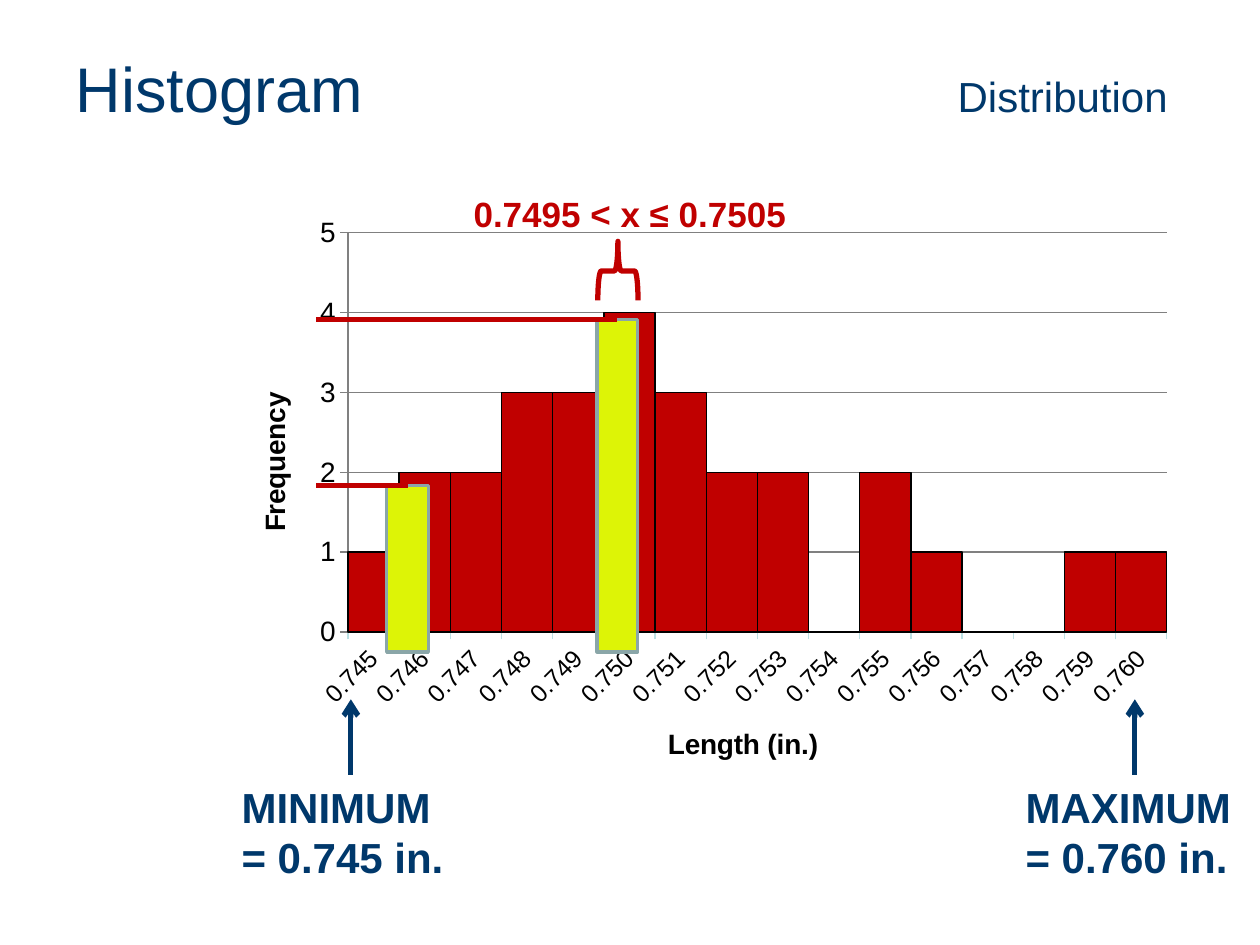
from lxml import etree
from pptx import Presentation
from pptx.chart.data import CategoryChartData
from pptx.dml.color import RGBColor
from pptx.enum.chart import XL_CHART_TYPE, XL_TICK_MARK
from pptx.enum.shapes import MSO_CONNECTOR, MSO_SHAPE
from pptx.enum.text import MSO_ANCHOR, PP_ALIGN
from pptx.oxml import parse_xml
from pptx.oxml.ns import nsdecls, qn
from pptx.util import Pt

COLUMN_CLUSTERED = XL_CHART_TYPE.COLUMN_CLUSTERED
TICK_OUTSIDE = XL_TICK_MARK.OUTSIDE
STRAIGHT = MSO_CONNECTOR.STRAIGHT
RECTANGLE = MSO_SHAPE.RECTANGLE
RIGHT_BRACE = MSO_SHAPE.RIGHT_BRACE
MIDDLE = MSO_ANCHOR.MIDDLE
LEFT = PP_ALIGN.LEFT
TOP_SITE = 0

NAVY = RGBColor(0x00, 0x38, 0x6B)
RED = RGBColor(0xC0, 0x00, 0x00)
YELLOW = RGBColor(0xDD, 0xF4, 0x06)
GREY_BLUE = RGBColor(0x8A, 0xA6, 0xA8)
PALE_BLUE = RGBColor(0xBB, 0xE0, 0xE3)
GREY = RGBColor(0x80, 0x80, 0x80)
BLACK = RGBColor(0x00, 0x00, 0x00)

FONT = "Arial"
LENGTH_FORMAT = "0.000"
FREQUENCIES = (1, 2, 2, 3, 3, 4, 3, 2, 2, 0, 2, 1, 0, 0, 1, 1)
LENGTHS = [(745 + step) / 1000 for step in range(len(FREQUENCIES))]


def format_font(font, size, color=BLACK, bold=False):
    font.name = FONT
    font.size = Pt(size)
    font.bold = bold
    font.color.rgb = color


def write(paragraph, text, **text_format):
    run = paragraph.add_run()
    run.text = text
    format_font(run.font, **text_format)


def format_line(line, color, width):
    line.color.rgb = color
    line.width = Pt(width)


def place(shape, box):
    shape.left, shape.top, shape.width, shape.height = (Pt(length) for length in box)


def add_text(slide, box, text, **text_format):
    text_box = slide.shapes.add_textbox(*(Pt(length) for length in box))
    text_box.text_frame.word_wrap = True
    write(text_box.text_frame.paragraphs[0], text, **text_format)
    return text_box


def add_line(slide, start, end, color):
    points = [Pt(length) for length in (*start, *end)]
    connector = slide.shapes.add_connector(STRAIGHT, *points)
    format_line(connector.line, color, 3)
    etree.SubElement(connector._element.spPr, qn("a:effectLst"))
    return connector


def add_title(slide, box):
    title = slide.shapes.title
    place(title, box)
    title.text_frame.vertical_anchor = MIDDLE
    paragraph = title.text_frame.paragraphs[0]
    paragraph.alignment = LEFT
    tab_list = etree.SubElement(paragraph._p.get_or_add_pPr(), qn("a:tabLst"))
    etree.SubElement(tab_list, qn("a:tab"), pos=str(Pt(504)), algn="l")
    write(paragraph, "Histogram\t", size=36, color=NAVY)
    write(paragraph, "Distribution", size=24, color=NAVY)


def chart_layout(box, x, y, **size):
    """Return a manual layout for a part at x, y points from the chart's corner."""
    _, _, width, height = box
    modes = "".join(f'<c:{axis}Mode val="edge"/>' for axis in "xy")
    target = '<c:layoutTarget val="inner"/>' if size else ""
    whole = {"x": width, "y": height, "w": width, "h": height}
    lengths = {"x": x, "y": y, **size}
    values = "".join(
        f'<c:{key} val="{length / whole[key]}"/>' for key, length in lengths.items()
    )
    return parse_xml(
        f'<c:layout {nsdecls("c")}><c:manualLayout>{target}{modes}{values}'
        "</c:manualLayout></c:layout>"
    )


def format_axis(axis, title, label_size, line_color, layout):
    axis.major_tick_mark = TICK_OUTSIDE
    format_font(axis.tick_labels.font, label_size)
    format_line(axis.format.line, line_color, 0.75)
    write(axis.axis_title.text_frame.paragraphs[0], title, size=16, bold=True)
    title_element = axis.axis_title._element
    for old_layout in title_element.findall(qn("c:layout")):
        title_element.remove(old_layout)
    title_element.find(qn("c:tx")).addnext(layout)


def add_histogram(slide, box):
    data = CategoryChartData()
    data.categories = LENGTHS
    data.categories.number_format = LENGTH_FORMAT
    data.add_series("Series 1", FREQUENCIES)
    frame = slide.shapes.add_chart(
        COLUMN_CLUSTERED, *(Pt(length) for length in box), data
    )
    chart = frame.chart
    chart.has_legend = False
    chart.has_title = False
    format_font(chart.font, 10)

    plot = chart.plots[0]
    plot.gap_width = 0
    plot.vary_by_categories = False
    series = plot.series[0]
    series.format.fill.solid()
    series.format.fill.fore_color.rgb = RED
    format_line(series.format.line, BLACK, 0.75)

    length_axis = chart.category_axis
    length_title = chart_layout(box, x=247, y=294.5)
    format_axis(length_axis, "Length (in.)", 14, PALE_BLUE, length_title)
    length_axis.tick_labels.number_format = LENGTH_FORMAT
    length_axis.tick_labels.number_format_is_linked = False
    length_axis._element.txPr.bodyPr.set("rot", "-2700000")

    frequency_axis = chart.value_axis
    frequency_title = chart_layout(box, x=12, y=104)
    format_axis(frequency_axis, "Frequency", 16, GREY, frequency_title)
    frequency_axis.axis_title.text_frame._txBody.bodyPr.set("rot", "-5400000")
    frequency_axis.minimum_scale, frequency_axis.maximum_scale = 0, 5
    frequency_axis.major_unit = 1
    format_line(frequency_axis.major_gridlines.format.line, GREY, 0.75)

    plot_area = chart._chartSpace.chart.plotArea
    for old_layout in plot_area.findall(qn("c:layout")):
        plot_area.remove(old_layout)
    plot_area.insert(0, chart_layout(box, x=67, y=15.5, w=468, h=228.3))


def add_highlighted_bar(slide, box, line_left):
    """Add a bar with a line from the frequency axis to its top."""
    left, top, width, _ = box
    bar = slide.shapes.add_shape(RECTANGLE, *(Pt(length) for length in box))
    bar.shadow.inherit = False
    bar.fill.solid()
    bar.fill.fore_color.rgb = YELLOW
    format_line(bar.line, GREY_BLUE, 2)
    line = add_line(slide, (line_left, top), (left + width / 2, top), RED)
    line.end_connect(bar, TOP_SITE)


def add_limit(slide, box, text, arrow_length):
    """Add a label with an arrow up to the length axis."""
    left, top, width, _ = box
    label = add_text(slide, box, text, size=24, color=NAVY, bold=True)
    middle = left + width / 2
    arrow = add_line(slide, (middle, top), (middle, top - arrow_length), NAVY)
    arrow.begin_connect(label, TOP_SITE)
    etree.SubElement(arrow.line._get_or_add_ln(), qn("a:tailEnd"), type="arrow")


def add_interval(slide, label_box, brace_box):
    brace = slide.shapes.add_shape(RIGHT_BRACE, *(Pt(length) for length in brace_box))
    brace.shadow.inherit = False
    brace.rotation = 270
    brace.fill.background()
    format_line(brace.line, RED, 3)
    add_text(slide, label_box, "0.7495 < x ≤ 0.7505", size=20, color=RED, bold=True)


def main():
    presentation = Presentation()
    presentation.slide_width, presentation.slide_height = Pt(720), Pt(540)
    slide = presentation.slides.add_slide(presentation.slide_layouts[5])
    add_title(slide, (36, 21.6, 648, 56.2))
    add_histogram(slide, (131.8, 117.4, 545.8, 332.6))
    for box in ((221, 277.5, 23.8, 95), (341.3, 182.5, 23, 190)):
        add_highlighted_bar(slide, box, line_left=180.7)
    for left, text in ((131, "MINIMUM = 0.745 in."), (579, "MAXIMUM = 0.760 in.")):
        add_limit(slide, (left, 442.8, 139, 65.5), text, arrow_length=43.2)
    add_interval(slide, (263.5, 106.6, 195.1, 31.5), (336.2, 143.3, 33.8, 23))
    presentation.save("out.pptx")


if __name__ == "__main__":
    main()
